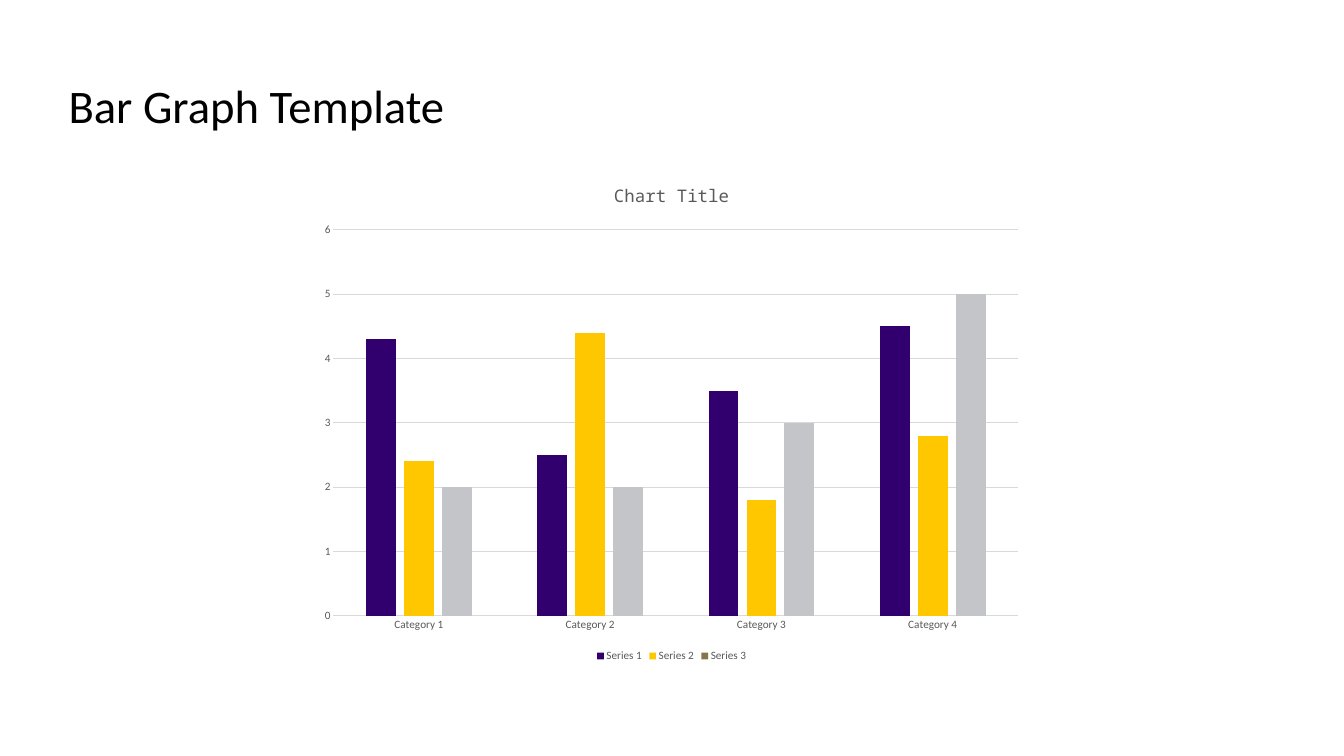
"""Build a title slide section with a clustered column chart of three series."""
from dataclasses import dataclass
from typing import Optional

from pptx import Presentation
from pptx.chart.chart import Chart
from pptx.chart.data import CategoryChartData
from pptx.dml.color import RGBColor
from pptx.enum.chart import XL_CHART_TYPE, XL_LEGEND_POSITION, XL_TICK_MARK
from pptx.enum.text import MSO_ANCHOR, PP_ALIGN
from pptx.slide import Slide
from pptx.text.text import Font
from pptx.util import Inches, Pt

BLACK = RGBColor(0x00, 0x00, 0x00)
DARK_GRAY = RGBColor(0x59, 0x59, 0x59)
LINE_GRAY = RGBColor(0xD9, 0xD9, 0xD9)
PURPLE = RGBColor(0x32, 0x00, 0x6E)
GOLD = RGBColor(0xFF, 0xC7, 0x00)
BRONZE = RGBColor(0x85, 0x75, 0x4D)
SILVER = RGBColor(0xC3, 0xC5, 0xC8)

BODY_FONT = "Calibri"
MONO_FONT = "Noto Sans Mono"
SLIDE_WIDTH, SLIDE_HEIGHT = Inches(20), Inches(11.25)


@dataclass(frozen=True)
class Box:
    """A rectangle in inches."""

    left: float
    top: float
    width: float
    height: float

    def lengths(self) -> tuple:
        """Return left, top, width and height as slide lengths."""
        return tuple(map(Inches, (self.left, self.top, self.width, self.height)))


@dataclass(frozen=True)
class ColumnSeries:
    """One chart series, with an optional colour for its columns."""

    name: str
    values: tuple
    color: RGBColor
    column_color: Optional[RGBColor] = None


TITLE_BOX = Box(0.92, 1.19, 17.25, 0.86)
CHART_BOX = Box(4.62, 2.46, 10.75, 7.44)
CATEGORIES = [f"Category {number}" for number in range(1, 5)]
SERIES = (
    ColumnSeries("Series 1", (4.3, 2.5, 3.5, 4.5), PURPLE),
    ColumnSeries("Series 2", (2.4, 4.4, 1.8, 2.8), GOLD),
    ColumnSeries("Series 3", (2, 2, 3, 5), BRONZE, SILVER),
)


def format_font(font: Font, size: float, color: RGBColor, name: str = BODY_FONT) -> None:
    """Set a regular font with the given size, colour and name."""
    font.name = name
    font.size = Pt(size)
    font.bold = False
    font.color.rgb = color


def add_title(slide: Slide, text: str) -> None:
    """Move, fill and format the title placeholder."""
    title = slide.shapes.title
    title.left, title.top, title.width, title.height = TITLE_BOX.lengths()
    text_frame = title.text_frame
    text_frame.text = text
    text_frame.word_wrap = True
    text_frame.vertical_anchor = MSO_ANCHOR.MIDDLE
    paragraph = text_frame.paragraphs[0]
    paragraph.alignment = PP_ALIGN.LEFT
    paragraph.line_spacing = 0.9
    format_font(paragraph.runs[0].font, 50, BLACK)


def format_axes(chart: Chart) -> None:
    """Style both axes and the horizontal grid lines."""
    for axis in (chart.category_axis, chart.value_axis):
        axis.major_tick_mark = XL_TICK_MARK.NONE
        axis.minor_tick_mark = XL_TICK_MARK.NONE
        format_font(axis.tick_labels.font, 12, DARK_GRAY)
    value_axis = chart.value_axis
    value_axis.minimum_scale, value_axis.maximum_scale = 0, 6
    value_axis.major_unit = 1
    value_axis.format.line.fill.background()
    value_axis.has_major_gridlines = True
    for line in (chart.category_axis.format.line, value_axis.major_gridlines.format.line):
        line.color.rgb = LINE_GRAY
        line.width = Pt(0.75)


def color_columns(chart: Chart) -> None:
    """Space the columns and fill each series and its own columns."""
    plot = chart.plots[0]
    plot.vary_by_categories = False
    plot.gap_width = 219
    plot.overlap = -27
    for series, column_series in zip(plot.series, SERIES):
        series.format.fill.solid()
        series.format.fill.fore_color.rgb = column_series.color
        if column_series.column_color is not None:
            for index in range(len(column_series.values)):
                fill = series.points[index].format.fill
                fill.solid()
                fill.fore_color.rgb = column_series.column_color


def add_column_chart(slide: Slide, title: str) -> None:
    """Add the clustered column chart with its title and legend."""
    chart_data = CategoryChartData()
    chart_data.categories = CATEGORIES
    for column_series in SERIES:
        chart_data.add_series(column_series.name, column_series.values)
    chart = slide.shapes.add_chart(
        XL_CHART_TYPE.COLUMN_CLUSTERED, *CHART_BOX.lengths(), chart_data
    ).chart
    format_font(chart.font, 10, BLACK)

    chart.has_title = True
    text_frame = chart.chart_title.text_frame
    text_frame.text = title
    format_font(text_frame.paragraphs[0].runs[0].font, 18.6, DARK_GRAY, MONO_FONT)
    chart.chart_title.include_in_layout = False

    chart.has_legend = True
    chart.legend.position = XL_LEGEND_POSITION.BOTTOM
    chart.legend.include_in_layout = False
    format_font(chart.legend.font, 12, DARK_GRAY)

    format_axes(chart)
    color_columns(chart)


def main() -> None:
    """Create and save the presentation."""
    presentation = Presentation()
    presentation.slide_width, presentation.slide_height = SLIDE_WIDTH, SLIDE_HEIGHT
    slide = presentation.slides.add_slide(presentation.slide_layouts.get_by_name("Title Only"))
    add_title(slide, "Bar Graph Template")
    add_column_chart(slide, "Chart Title")
    presentation.save("out.pptx")


if __name__ == "__main__":
    main()
